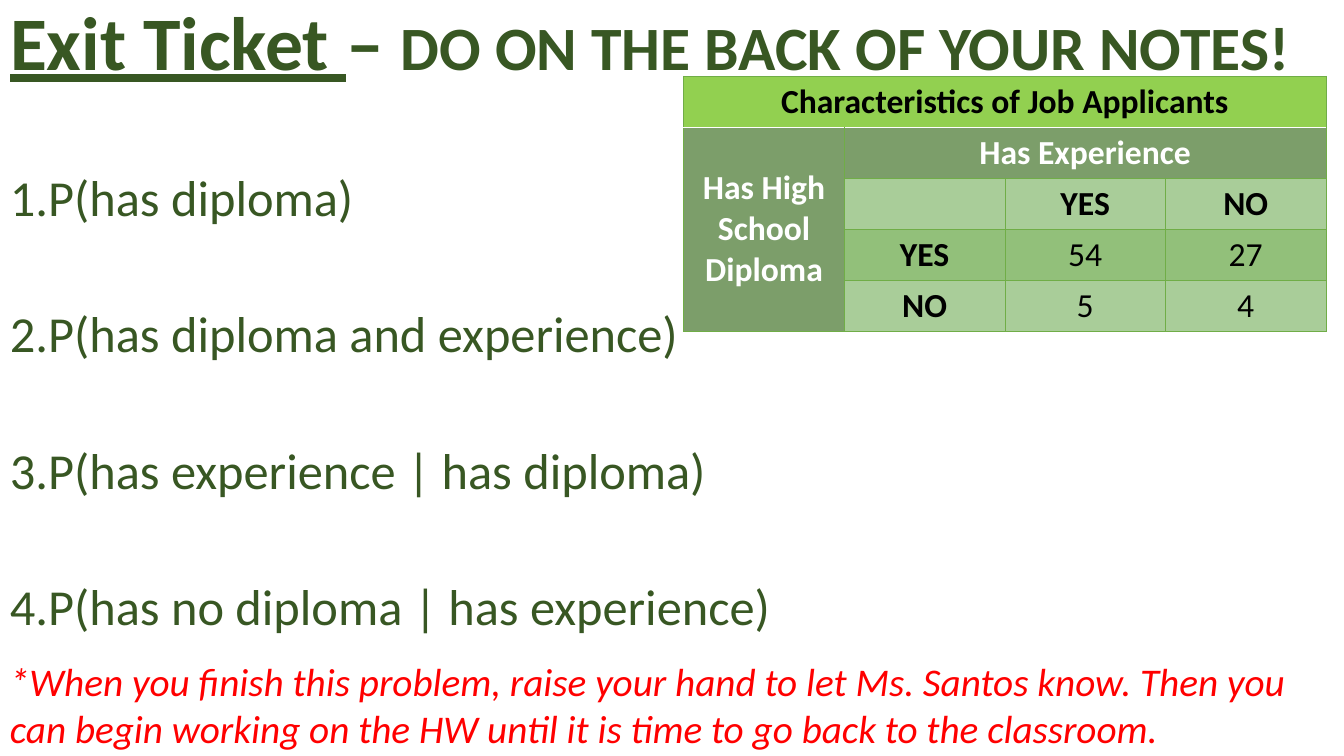
import pptx
import pptx.util
import pptx.dml.color
import pptx.enum.text
from pptx.oxml.ns import qn
from lxml import etree

Pt = pptx.util.Pt
ALIGN = pptx.enum.text.PP_ALIGN
ANCHOR = pptx.enum.text.MSO_ANCHOR

GREEN, RED, BLACK, WHITE = "385723", "FF0000", "000000", "FFFFFF"
LIME, SAGE, PALE, BAND, RULE = "92D050", "7C9E6A", "A9CD99", "92C07A", "70AD47"

TITLE_RUNS = [
    ("Exit Ticket ", 54, True),
    ("– ", 54, False),
    ("DO ON THE BACK OF YOUR NOTES!", 44, False),
]
QUESTIONS = [
    "P(has diploma)",
    "P(has diploma and experience)",
    "P(has experience | has diploma)",
    "P(has no diploma | has experience)",
]
REMINDER = (
    "*When you finish this problem, raise your hand to let Ms. Santos know. "
    "Then you can begin working on the HW until it is time to go back to the classroom."
)
TABLE_ROWS = [
    ["Characteristics of Job Applicants", "", "", ""],
    ["Has High School Diploma", "Has Experience", "", ""],
    ["", "", "YES", "NO"],
    ["", "YES", "54", "27"],
    ["", "NO", "5", "4"],
]
ROW_FILLS = [LIME, SAGE, PALE, BAND, PALE]
MERGES = [((0, 0), (0, 3)), ((1, 0), (4, 0)), ((1, 1), (1, 3))]
COLUMN_WIDTH, ROW_HEIGHT = 114.7, 36.5


def rgb(value):
    return pptx.dml.color.RGBColor.from_string(value)


def style(span, size, color, bold=False, italic=False, underline=False):
    font = span.font
    font.name, font.size = "Calibri", Pt(size)
    font.bold, font.italic, font.underline = bold, italic, underline
    font.color.rgb = rgb(color)


def add_text_box(page, left, top, width, height, anchor):
    frame = page.shapes.add_textbox(Pt(left), Pt(top), Pt(width), Pt(height)).text_frame
    frame.word_wrap = True
    frame.vertical_anchor = anchor
    return frame


def number(para, indent):
    properties = para._p.get_or_add_pPr()
    properties.set("marL", str(Pt(indent)))
    properties.set("indent", str(-Pt(indent)))
    etree.SubElement(properties, qn("a:buFont"), typeface="+mj-lt")
    etree.SubElement(properties, qn("a:buAutoNum"), type="arabicPeriod")


def set_borders(cell, edges):
    properties = cell._tc.get_or_add_tcPr()
    for position, (side, (color, width)) in enumerate(edges.items()):
        line = etree.Element(qn("a:ln" + side), w=str(Pt(width)))
        fill = etree.SubElement(line, qn("a:solidFill"))
        etree.SubElement(fill, qn("a:srgbClr"), val=color)
        properties.insert(position, line)


def add_title(page):
    title = page.shapes.title
    title.left, title.top, title.width, title.height = Pt(0), Pt(0), Pt(960), Pt(65.5)
    frame = title.text_frame
    frame.word_wrap = True
    frame.auto_size = pptx.enum.text.MSO_AUTO_SIZE.NONE
    frame.vertical_anchor = ANCHOR.MIDDLE
    para = frame.paragraphs[0]
    para.alignment, para.line_spacing = ALIGN.LEFT, 0.9
    for text, size, underline in TITLE_RUNS:
        span = para.add_run()
        span.text = text
        style(span, size, GREEN, bold=True, underline=underline)


def add_questions(page):
    frame = add_text_box(page, 0, 120.2, 828, 342.7, ANCHOR.TOP)
    frame.text = "\n".join(QUESTIONS)
    for para in frame.paragraphs:
        para.line_spacing, para.space_after = 0.9, Pt(58.4)
        number(para, 27)
        style(para.runs[0], 36, GREEN)


def add_applicant_table(page):
    rows, columns = len(TABLE_ROWS), len(TABLE_ROWS[0])
    table = page.shapes.add_table(
        rows, columns, Pt(488.4), Pt(54.4), Pt(COLUMN_WIDTH * columns), Pt(ROW_HEIGHT * rows)
    ).table
    for column in table.columns:
        column.width = Pt(COLUMN_WIDTH)
    for r, texts in enumerate(TABLE_ROWS):
        table.rows[r].height = Pt(ROW_HEIGHT)
        for c, text in enumerate(texts):
            cell = table.cell(r, c)
            label = r < 3 or c < 2
            heading = r == 1 or (r > 0 and c == 0)
            cell.text = text
            cell.vertical_anchor = ANCHOR.MIDDLE
            cell.fill.solid()
            cell.fill.fore_color.rgb = rgb(SAGE if heading else ROW_FILLS[r])
            edges = dict.fromkeys("LRTB", (RULE, 0.5))
            if r < 2:
                edges["B" if r == 0 else "T"] = (WHITE, 1)
            set_borders(cell, edges)
            para = cell.text_frame.paragraphs[0]
            para.alignment = ALIGN.CENTER
            for span in para.runs:
                style(span, 24, WHITE if heading else BLACK, bold=label)
    for first, last in MERGES:
        table.cell(*first).merge(table.cell(*last))


def add_reminder(page):
    frame = add_text_box(page, 0, 431.3, 950.4, 108.7, ANCHOR.BOTTOM)
    frame.text = REMINDER
    style(frame.paragraphs[0].runs[0], 28, RED, italic=True)


def main():
    deck = pptx.Presentation()
    deck.slide_width, deck.slide_height = Pt(960), Pt(540)
    page = deck.slides.add_slide(deck.slide_layouts[5])
    add_title(page)
    add_questions(page)
    add_applicant_table(page)
    add_reminder(page)
    deck.save("out.pptx")


if __name__ == "__main__":
    main()
